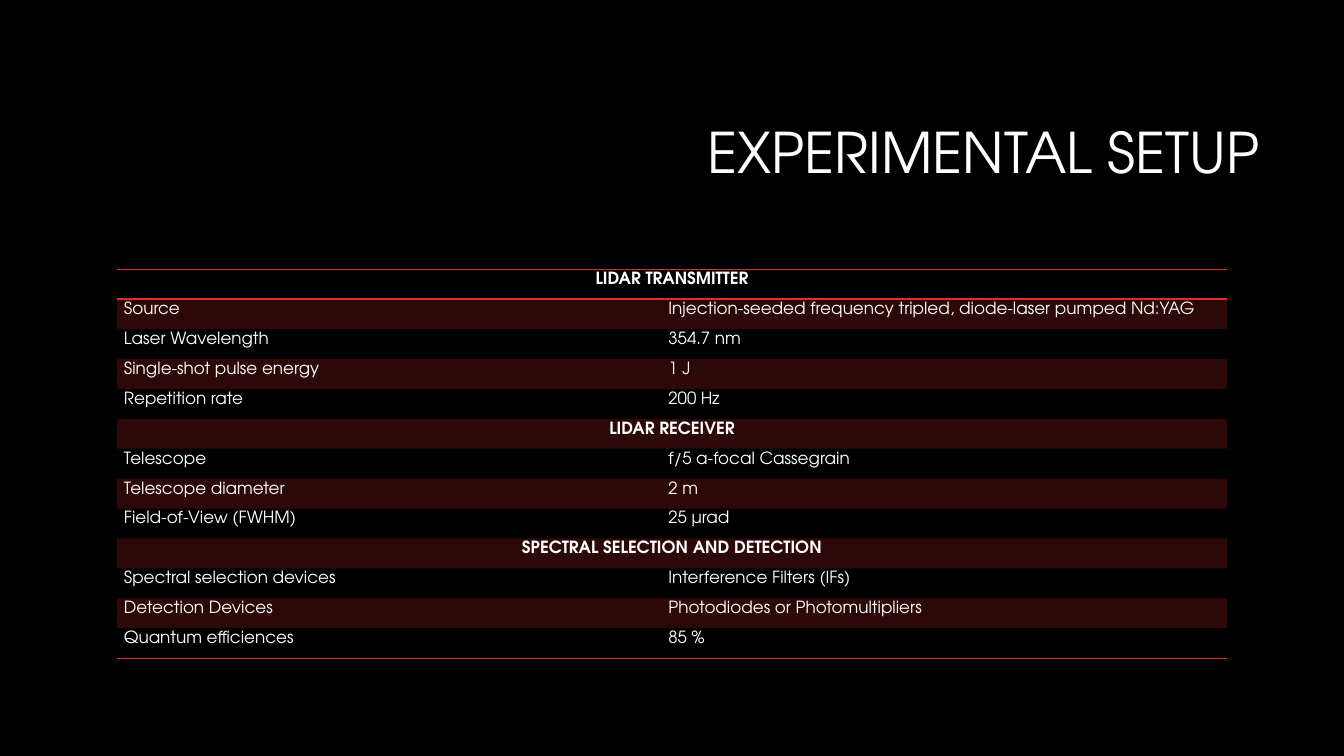
from lxml import etree
from pptx import Presentation
from pptx.dml.color import RGBColor
from pptx.enum import text
from pptx.oxml import ns
from pptx.util import Inches, Pt

TITLE = "EXPERIMENTAL SETUP"
SECTIONS = {
    "LIDAR TRANSMITTER": [
        ("Source", "Injection-seeded frequency tripled, diode-laser pumped Nd:YAG"),
        ("Laser Wavelength", "354.7 nm"),
        ("Single-shot pulse energy", "1 J"),
        ("Repetition rate", "200 Hz"),
    ],
    "LIDAR RECEIVER": [
        ("Telescope", "f/5 a-focal Cassegrain"),
        ("Telescope diameter", "2 m"),
        ("Field-of-View (FWHM)", "25 μrad"),
    ],
    "SPECTRAL SELECTION AND DETECTION": [
        ("Spectral selection devices", "Interference Filters (IFs)"),
        ("Detection Devices", "Photodiodes or Photomultipliers"),
        ("Quantum efficiences", "85 %"),
    ],
}
ROWS = [row for heading, entries in SECTIONS.items() for row in [(heading,), *entries]]

BLACK = RGBColor(0x00, 0x00, 0x00)
WHITE = RGBColor(0xFF, 0xFF, 0xFF)
RED = RGBColor(0xDF, 0x2E, 0x28)
FONT = "TeX Gyre Adventor"
BAND_OPACITY = 20
COLUMN_WIDTHS = (5.4, 5.61)
TABLE_HEIGHT = 3.86
PLAIN_TABLE_STYLE = "{2D5ABB26-0587-4C30-8999-92F81FD0307C}"
CELL_FORMAT = {
    "margin_left": Inches(0.07),
    "margin_right": Inches(0.07),
    "margin_top": Inches(0.03),
    "margin_bottom": Inches(0.03),
    "vertical_anchor": text.MSO_ANCHOR.TOP,
}


def set_attributes(target, values):
    for name, value in values.items():
        setattr(target, name, value)


def write(paragraph, words, size, alignment, bold=False):
    paragraph.alignment = alignment
    run = paragraph.add_run()
    run.text = words
    set_attributes(run.font, {"name": FONT, "size": Pt(size), "bold": bold})
    run.font.color.rgb = WHITE


def add_border(cell, side):
    properties = cell._tc.get_or_add_tcPr()
    line = etree.SubElement(properties, ns.qn(f"a:ln{side}"), w=str(Pt(1)))
    fill = etree.SubElement(line, ns.qn("a:solidFill"))
    etree.SubElement(fill, ns.qn("a:srgbClr"), val=str(RED))


def fill_band(cell, banded):
    if not banded:
        cell.fill.background()
        return
    cell.fill.solid()
    cell.fill.fore_color.rgb = RED
    color = cell._tc.tcPr.find(".//" + ns.qn("a:solidFill") + "[last()]/" + ns.qn("a:srgbClr"))
    etree.SubElement(color, ns.qn("a:alpha"), val=str(BAND_OPACITY * 1000))


def add_title(slide):
    box = slide.shapes.add_textbox(Inches(3.17), Inches(0.84), Inches(9.42), Inches(1.41))
    frame = box.text_frame
    set_attributes(frame, {"word_wrap": True, "vertical_anchor": text.MSO_ANCHOR.MIDDLE})
    paragraph = frame.paragraphs[0]
    paragraph.line_spacing = 0.9
    write(paragraph, TITLE, 40, text.PP_ALIGN.RIGHT)


def add_setup_table(slide):
    frame = slide.shapes.add_table(
        len(ROWS), len(COLUMN_WIDTHS), Inches(1.16), Inches(2.67),
        Inches(sum(COLUMN_WIDTHS)), Inches(TABLE_HEIGHT))
    table = frame.table
    set_attributes(table, {"first_row": False, "horz_banding": False})
    table._tbl.tblPr.find(ns.qn("a:tableStyleId")).text = PLAIN_TABLE_STYLE
    for column, width in zip(table.columns, COLUMN_WIDTHS):
        column.width = Inches(width)
    borders = {0: "TB", len(ROWS) - 1: "B"}
    for index, row in enumerate(ROWS):
        table.rows[index].height = Inches(TABLE_HEIGHT / len(ROWS))
        is_heading = len(row) == 1
        if is_heading:
            table.cell(index, 0).merge(table.cell(index, 1))
        for cell in table.rows[index].cells:
            set_attributes(cell, CELL_FORMAT)
            for side in borders.get(index, ""):
                add_border(cell, side)
            fill_band(cell, index % 2 == 1)
        alignment = text.PP_ALIGN.CENTER if is_heading else text.PP_ALIGN.LEFT
        for column, words in enumerate(row):
            paragraph = table.cell(index, column).text_frame.paragraphs[0]
            write(paragraph, words, 12, alignment, is_heading)


def main():
    presentation = Presentation()
    set_attributes(presentation, {"slide_width": Inches(13.33), "slide_height": Inches(7.5)})
    slide = presentation.slides.add_slide(presentation.slide_layouts[6])
    slide.background.fill.solid()
    slide.background.fill.fore_color.rgb = BLACK
    add_title(slide)
    add_setup_table(slide)
    presentation.save("out.pptx")


if __name__ == "__main__":
    main()
